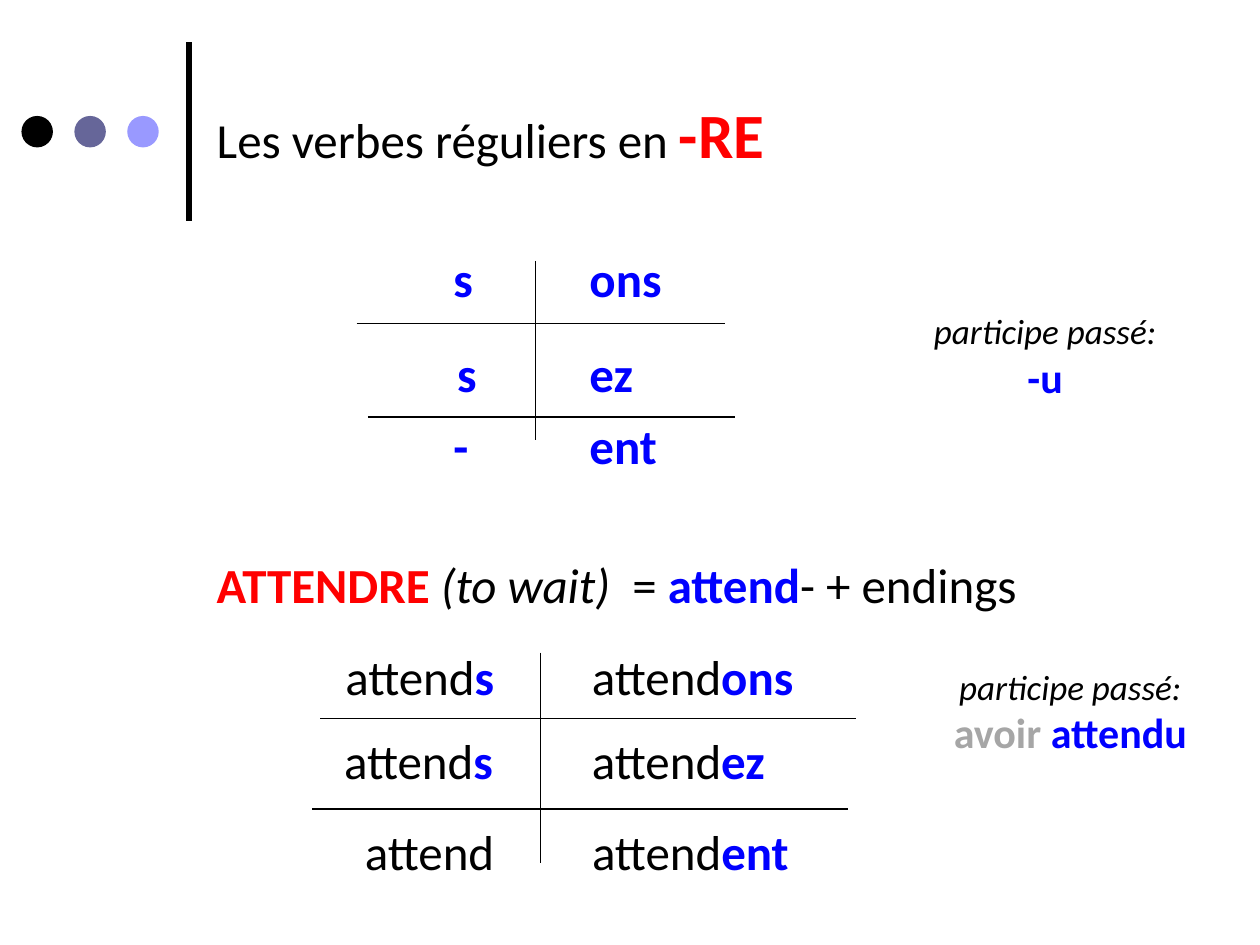
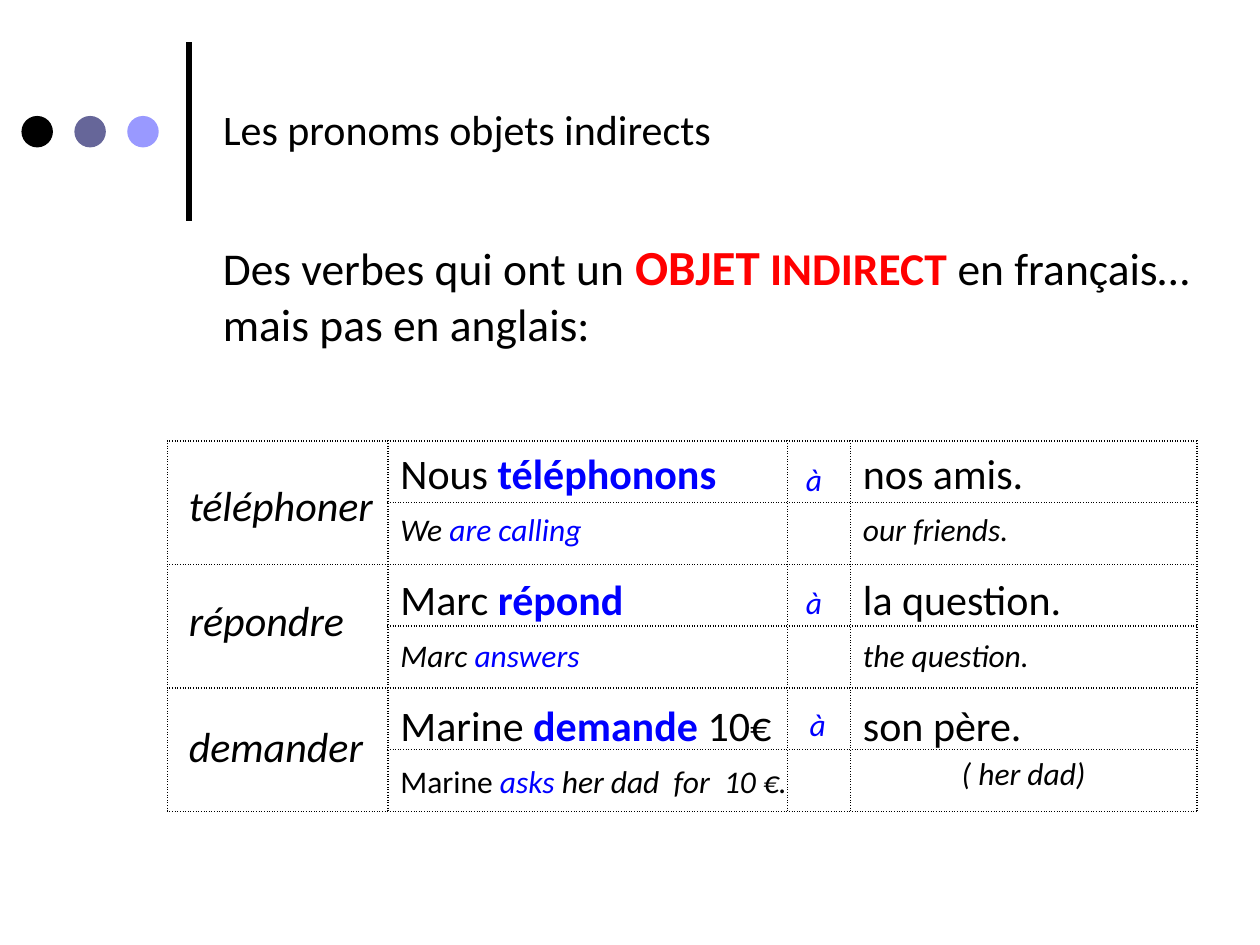
import lxml.etree
import pptx
import pptx.dml.color
import pptx.enum.shapes
import pptx.enum.text
import pptx.oxml.ns
import pptx.util

PX = 9144  # EMU in one px, 100 px to the inch
FONT = "Calibri"
BLACK, RED, BLUE, GRAY = "000000", "FF0000", "0000FF", "A6A6A6"
DOTS = [BLACK, "666699", "9999FF"]
ALIGN = {
    "l": pptx.enum.text.PP_ALIGN.LEFT,
    "c": pptx.enum.text.PP_ALIGN.CENTER,
    "r": pptx.enum.text.PP_ALIGN.RIGHT,
}
qn = pptx.oxml.ns.qn


def px(*nums):
    return [round(num * PX) for num in nums]


def rgb(code):
    return pptx.dml.color.RGBColor.from_string(code)


def setall(item, **form):
    for key, value in form.items():
        setattr(item, key, value)


def write(frame, paras, align="l"):
    """Each paragraph is a list of runs: text, size, colour, marks (b, i)."""
    for num, runs in enumerate(paras):
        para = frame.add_paragraph() if num else frame.paragraphs[0]
        para.alignment = ALIGN[align]
        for words, size, color, marks in runs:
            run = para.add_run()
            run.text = words
            setall(run.font, name=FONT, size=pptx.util.Pt(size),
                   bold="b" in marks, italic="i" in marks)
            run.font.color.rgb = rgb(color)


def label(slide, box, *paras, align="l"):
    frame = slide.shapes.add_textbox(*px(*box)).text_frame
    setall(frame, word_wrap=True,
           auto_size=pptx.enum.text.MSO_AUTO_SIZE.SHAPE_TO_FIT_TEXT)
    write(frame, paras, align)


def rule(slide, x1, y1, x2, y2, width=0.75):
    line = slide.shapes.add_connector(
        pptx.enum.shapes.MSO_CONNECTOR.STRAIGHT, *px(x1, y1, x2, y2))
    line.line.color.rgb = rgb(BLACK)
    line.line.width = pptx.util.Pt(width)
    lxml.etree.SubElement(line._element.spPr, qn("a:effectLst"))


def start(deck, box, runs):
    """Add a slide with the bar, the dots and its title."""
    slide = deck.slides.add_slide(deck.slide_layouts[5])
    rule(slide, 150, 175, 150, 33, 3)
    for num, color in enumerate(DOTS):
        dot = slide.shapes.add_shape(
            pptx.enum.shapes.MSO_SHAPE.OVAL, *px(17 + 42 * num, 92, 25, 25))
        dot.shadow.inherit = False
        dot.fill.solid()
        dot.fill.fore_color.rgb = rgb(color)
        dot.line.fill.background()
    title = slide.shapes.title
    setall(title, **dict(zip(("left", "top", "width", "height"), px(*box))))
    setall(title.text_frame, word_wrap=True,
           auto_size=pptx.enum.text.MSO_AUTO_SIZE.NONE,
           vertical_anchor=pptx.enum.text.MSO_ANCHOR.TOP)
    write(title.text_frame, [runs])
    return slide


def forms(slide, left, top, lines, rows, stem=""):
    """Conjugation cross: rules, then singular and plural forms."""
    for x1, y1, x2, y2 in lines:
        rule(slide, left + x1, top + y1, left + x2, top + y2)
    align = "r" if stem else "l"
    base = [(stem, 28, BLACK, "")] if stem else []
    for y, x1, w1, one, x2, w2, many in rows:
        for x, w, end, side in ((x1, w1, one, align), (x2, w2, many, "l")):
            runs = base + ([(end, 28, BLUE, "b")] if end else [])
            label(slide, (left + x, top + y, w, 57), runs, align=side)


def past(slide, left, top, runs):
    """Past participle note."""
    label(slide, (left, top, 225, 44),
          [("participe passé:", 20, BLACK, "i")], align="c")
    label(slide, (left, top + 33, 225, 51), runs, align="c")


def verbs(deck):
    slide = start(deck, (162, 71, 742, 71), [
        ("Les verbes réguliers en ", 28, BLACK, ""), ("-RE", 36, RED, "b")])
    # Endings
    forms(slide, 283, 192,
          [(9, 139, 300, 139), (0, 65, 292, 65), (142, 15, 142, 157)],
          [(0, 67, 50, "s", 175, 125, "ons"),
           (76, 70, 50, "s", 175, 125, "ez"),
           (133, 67, 50, "-", 175, 125, "ent")])
    past(slide, 717, 241, [("-u", 24, BLUE, "b")])
    # Example
    label(slide, (162, 435, 742, 57), [
        ("ATTENDRE ", 28, RED, "b"), ("(to wait)  ", 28, BLACK, "i"),
        ("= ", 28, BLACK, ""), ("attend", 28, BLUE, "b"),
        ("- + endings", 28, BLACK, "")])
    forms(slide, 225, 508,
          [(23, 134, 448, 134), (29, 62, 454, 62), (204, 10, 204, 177)],
          [(0, 0, 177, "s", 235, 240, "ons"),
           (67, 18, 158, "s", 235, 200, "ez"),
           (139, 35, 142, "", 235, 225, "ent")], "attend")
    past(slide, 737, 523,
         [("avoir ", 24, GRAY, "b"), ("attendu", 24, BLUE, "b")])


def border(cell):
    props = cell._tc.get_or_add_tcPr()
    for side in ("lnL", "lnR", "lnT", "lnB"):
        line = lxml.etree.SubElement(props, qn("a:" + side), w="12700")
        fill = lxml.etree.SubElement(line, qn("a:solidFill"))
        lxml.etree.SubElement(fill, qn("a:srgbClr"), val=BLACK)
        lxml.etree.SubElement(line, qn("a:prstDash"), val="sysDot")
    cell.fill.background()


def grid(slide, left, top, cols, count, high):
    """Dotted table whose first column joins rows in pairs."""
    table = slide.shapes.add_table(
        count, len(cols), *px(left, top, sum(cols), count * high)).table
    setall(table, first_row=False, horz_banding=False)
    for col, wide in zip(table.columns, cols):
        col.width = px(wide)[0]
    for row in table.rows:
        row.height = px(high)[0]
        for cell in row.cells:
            border(cell)
    for num in range(0, count, 2):
        table.cell(num, 0).merge(table.cell(num + 1, 0))
    return table


def sample(slide, left, top, verb, mark, french, end, english, gloss):
    """One verb: French line with its object, English line below."""
    (vy, vw), (mx, my) = verb[1:], mark
    label(slide, (left + 7, top + vy, vw, 50), [(verb[0], 24, BLACK, "i")])
    label(slide, (left + 175, top, 338, 50), french)
    label(slide, (left + mx, top + my, 58, 40),
          [("à", 18, BLUE, "i")], align="c")
    label(slide, (left + 542, top, 258, 50), [(end, 24, BLACK, "")])
    low = top + 50
    label(slide, (left + 175, low, 350, 40), english)
    if gloss:
        label(slide, (left + 542, low, 258, 40), [(gloss, 18, BLACK, "i")])


def nouns(deck):
    slide = start(deck, (167, 77, 750, 51),
                  [("Les pronoms objets indirects", 24, BLACK, "")])
    label(slide, (167, 183, 833, 101),
          [("Des verbes qui ont un ", 26, BLACK, ""),
           ("OBJET", 28, RED, "b"), (" INDIRECT ", 26, RED, "b"),
           ("en français…", 26, BLACK, "")],
          [("mais pas en anglais:", 26, BLACK, "")])
    # Table and its sentences
    left, top = 133, 350
    table = grid(slide, left, top, [175, 317, 50, 275], 6, 49)
    write(table.cell(5, 3).text_frame,
          [[("( her dad)", 18, BLACK, "i")]], "c")
    samples = [
        (("téléphoner", 26, 167), (484, 10),
         [("Nous ", 24, BLACK, ""), ("téléphonons", 24, BLUE, "b")],
         "nos amis.",
         [("We ", 18, BLACK, "i"), ("are calling", 18, BLUE, "i")],
         "our friends."),
        (("répondre", 17, 167), (484, 8),
         [("Marc ", 24, BLACK, ""), ("répond", 24, BLUE, "b")],
         "la question.",
         [("Marc ", 18, BLACK, "i"), ("answers", 18, BLUE, "i")],
         "the question."),
        (("demander", 17, 158), (487, 5),
         [("Marine ", 24, BLACK, ""), ("demande ", 24, BLUE, "b"),
          ("10€", 24, BLACK, "")],
         "son père.",
         [("Marine ", 18, BLACK, ""), ("asks ", 18, BLUE, "i"),
          ("her dad  for  10 €.", 18, BLACK, "i")], ""),
    ]
    for num, parts in enumerate(samples):
        sample(slide, left, top + 100 * num, *parts)


def main():
    deck = pptx.Presentation()
    deck.slide_width, deck.slide_height = px(1000, 750)
    verbs(deck)
    nouns(deck)
    deck.save("out.pptx")


if __name__ == "__main__":
    main()
